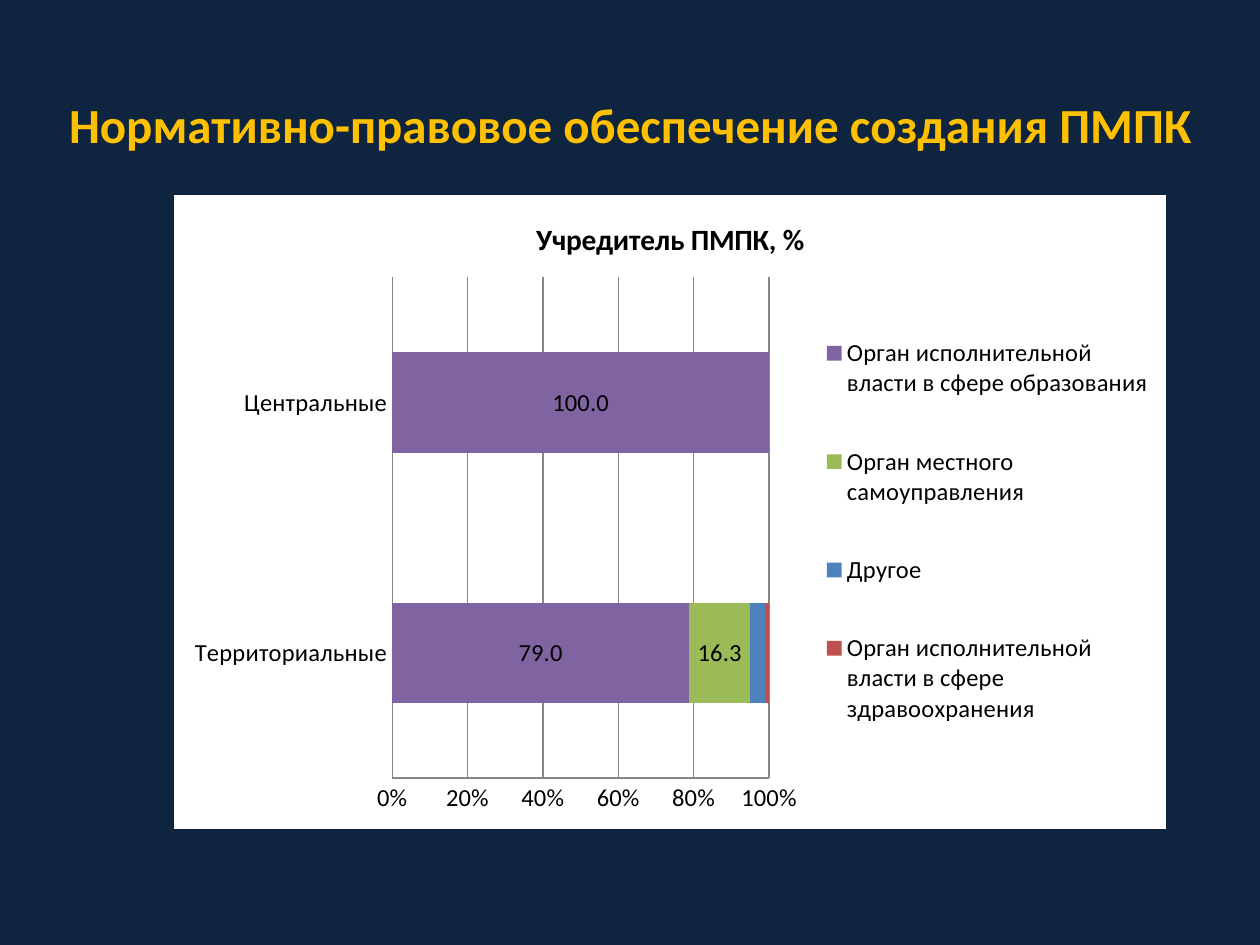
from lxml import etree
from pptx import Presentation
from pptx import util as u
from pptx.chart.data import CategoryChartData
from pptx.dml.color import RGBColor
from pptx.enum import chart as ch, text
from pptx.oxml import parse_xml
from pptx.oxml.ns import nsdecls, qn

PX = 914400 // 126
FONT = "Calibri"
NAVY = RGBColor(0x0F, 0x24, 0x3E)
GOLD = RGBColor(0xFF, 0xC0, 0x00)
BLACK = RGBColor(0, 0, 0)
GREY = RGBColor(0x86, 0x86, 0x86)
PURPLE = RGBColor(0x80, 0x64, 0xA2)
GREEN = RGBColor(0x9B, 0xBB, 0x59)
BLUE = RGBColor(0x4F, 0x81, 0xBD)
RED = RGBColor(0xC0, 0x50, 0x4D)

CATEGORIES = ("Территориальные", "Центральные")
# Name, values, colour, whether values are labelled
FOUNDERS = (
    ("Орган исполнительной власти в сфере образования", (79, 100), PURPLE, True),
    ("Орган местного самоуправления", (16.3, 0), GREEN, True),
    ("Другое", (4, 0), BLUE, False),
    ("Орган исполнительной власти в сфере здравоохранения", (1, 0), RED, False),
)


def set_font(font, size, color, bold=False):
    font.name, font.size, font.bold = FONT, u.Pt(size), bold
    font.color.rgb = color


def set_layout(parent, index, x, y, w, h, inner=False):
    """Fix a chart part at fractions of the chart's box."""
    for old in parent.findall(qn("c:layout")):
        parent.remove(old)
    target = '<c:layoutTarget val="inner"/>' if inner else ""
    sizes = "".join(f'<c:{k} val="{v}"/>' for k, v in zip("xywh", (x, y, w, h)))
    parent.insert(index, parse_xml(
        f'<c:layout {nsdecls("c")}><c:manualLayout>{target}'
        f'<c:xMode val="edge"/><c:yMode val="edge"/>{sizes}'
        '</c:manualLayout></c:layout>'))


def add_title(s, x, y, w, h):
    sp = s.shapes.add_textbox(x * PX, y * PX, w * PX, h * PX)
    tf = sp.text_frame
    tf.word_wrap = True
    tf.vertical_anchor = text.MSO_ANCHOR.MIDDLE
    p = tf.paragraphs[0]
    p.text = "Нормативно-правовое обеспечение создания ПМПК"
    p.alignment = text.PP_ALIGN.CENTER
    set_font(p.runs[0].font, 28, GOLD, True)


def style_series(series, values, color, labelled):
    series.format.fill.solid()
    series.format.fill.fore_color.rgb = color
    if not labelled:
        return
    labels = series.data_labels
    labels.show_value = True
    labels.number_format = "###0.0"
    labels.number_format_is_linked = False
    set_font(labels.font, 14, BLACK)
    # Zero values carry no label
    for i, value in enumerate(values):
        if value == 0:
            labels._element.insert(0, parse_xml(
                f'<c:dLbl {nsdecls("c")}><c:idx val="{i}"/>'
                '<c:delete val="1"/></c:dLbl>'))


def add_founder_chart(s, x, y, w, h):
    data = CategoryChartData(number_format="###0.0")
    data.categories = CATEGORIES
    for name, values, _, _ in FOUNDERS:
        data.add_series(name, values)
    chart = s.shapes.add_chart(ch.XL_CHART_TYPE.BAR_STACKED_100,
                               x * PX, y * PX, w * PX, h * PX, data).chart
    set_font(chart.font, 14, BLACK)

    # White background
    space = chart._chartSpace
    space.find(qn("c:chart")).addnext(parse_xml(
        f'<c:spPr {nsdecls("c", "a")}><a:solidFill><a:srgbClr val="FFFFFF"/>'
        '</a:solidFill><a:ln><a:noFill/></a:ln></c:spPr>'))

    # Title
    chart.has_title = True
    tf = chart.chart_title.text_frame
    tf.text = "Учредитель ПМПК, %"
    set_font(tf.paragraphs[0].runs[0].font, 16.8, BLACK, True)

    # Bars
    plot = chart.plots[0]
    plot.gap_width, plot.overlap = 150, 100
    plot.vary_by_categories = False
    for series, (_, values, color, labelled) in zip(plot.series, FOUNDERS):
        style_series(series, values, color, labelled)
    set_layout(space.find(".//" + qn("c:plotArea")), 0,
               0.22, 0.13, 0.38, 0.79, inner=True)

    # Axes
    for axis in (chart.category_axis, chart.value_axis):
        axis.major_tick_mark = axis.minor_tick_mark = ch.XL_TICK_MARK.NONE
        axis.format.line.color.rgb = GREY
    axis = chart.value_axis
    axis.has_major_gridlines = True
    axis.major_gridlines.format.line.color.rgb = GREY
    axis.major_unit = 0.2
    axis.tick_labels.number_format = "0%"
    axis.tick_labels.number_format_is_linked = False

    # Legend
    chart.has_legend = True
    legend = chart.legend
    legend.position = ch.XL_LEGEND_POSITION.RIGHT
    legend.include_in_layout = False
    set_layout(legend._element, 1, 0.65, 0.15, 0.34, 0.76)


def main():
    prs = Presentation()
    prs.slide_width, prs.slide_height = u.Inches(10), u.Inches(7.5)
    s = prs.slides.add_slide(prs.slide_layouts[6])
    s.background.fill.solid()
    s.background.fill.fore_color.rgb = NAVY
    add_title(s, 44, 45, 1172, 158)
    add_founder_chart(s, 174, 195, 992, 634)
    prs.save("out.pptx")


if __name__ == "__main__":
    main()
